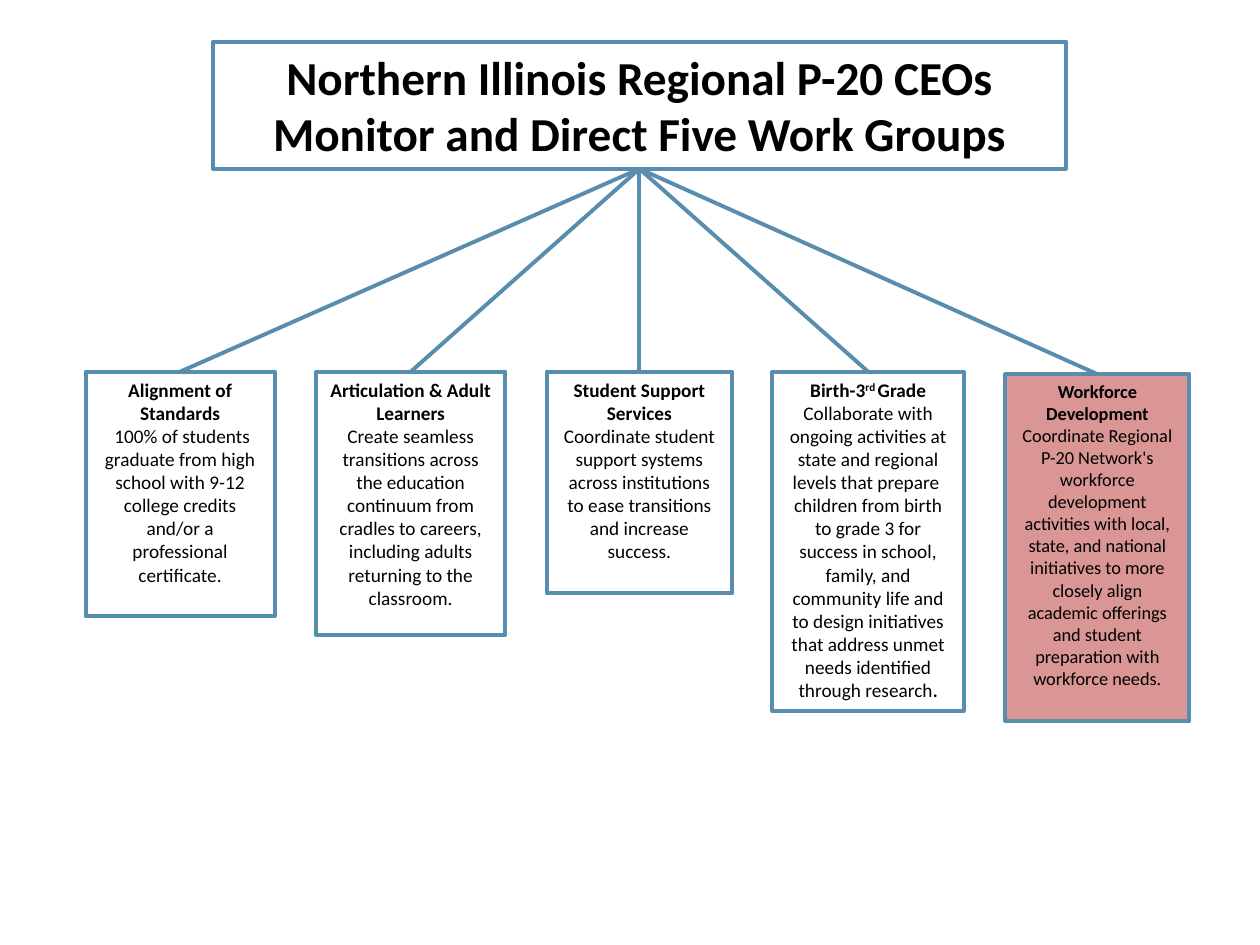
"""Build a slide showing the P-20 CEOs directing five work groups."""
from dataclasses import dataclass
from typing import Optional

from lxml import etree
from pptx import Presentation
from pptx.dml.color import RGBColor
from pptx.enum.shapes import MSO_CONNECTOR, MSO_SHAPE
from pptx.enum.text import MSO_ANCHOR, MSO_AUTO_SIZE, PP_ALIGN
from pptx.oxml.ns import qn
from pptx.shapes.autoshape import Shape
from pptx.slide import Slide
from pptx.util import Inches, Pt

RECTANGLE = MSO_SHAPE.RECTANGLE
STRAIGHT = MSO_CONNECTOR.STRAIGHT
TOP = MSO_ANCHOR.TOP
NO_AUTOFIT = MSO_AUTO_SIZE.NONE
CENTER = PP_ALIGN.CENTER


@dataclass(frozen=True)
class Theme:
    font: str = "Calibri"
    text: RGBColor = RGBColor(0x00, 0x00, 0x00)
    line: RGBColor = RGBColor(0x58, 0x8D, 0xAF)
    highlight: RGBColor = RGBColor(0xD9, 0x96, 0x94)
    line_width: float = 2.25
    title_size: float = 27
    group_size: float = 11
    small_size: float = 10.5


THEME = Theme()


@dataclass(frozen=True)
class TextRun:
    text: str
    bold: bool = False
    size: Optional[float] = None
    superscript: bool = False


@dataclass(frozen=True)
class Box:
    left: float
    top: float
    width: float
    height: float
    paragraphs: list[list[TextRun]]
    size: float = THEME.group_size
    fill: Optional[RGBColor] = None


def heading(text: str) -> list[TextRun]:
    return [TextRun(text, bold=True)]


GROUP_TOP = 2.95

TITLE = Box(1.69, 0.33, 6.77, 1.01, [
    heading("Northern Illinois Regional P-20 CEOs"),
    heading("Monitor and Direct Five Work Groups"),
], THEME.title_size)

WORK_GROUPS = [
    Box(0.68, GROUP_TOP, 1.5, 1.94, [
        heading("Alignment of Standards"),
        [TextRun(" 100% of students graduate from high school with 9-12 college "
                 "credits and/or a professional certificate.")],
    ]),
    Box(2.51, GROUP_TOP, 1.5, 2.09, [
        heading("Articulation & Adult Learners"),
        [TextRun("Create seamless transitions across the education continuum from "
                 "cradles to careers, including adults returning to the classroom.")],
    ]),
    Box(4.34, GROUP_TOP, 1.47, 1.76, [
        heading("Student Support Services"),
        [TextRun("Coordinate student support systems across institutions to ease "
                 "transitions and increase success.")],
    ]),
    Box(6.13, GROUP_TOP, 1.52, 2.69, [
        [TextRun("Birth-3", bold=True), TextRun("rd ", bold=True, superscript=True),
         TextRun("Grade", bold=True)],
        [TextRun("Collaborate with ongoing activities at state and regional levels "
                 "that prepare  children from birth to grade 3 for success in school, "
                 "family, and community life and to design initiatives that address "
                 "unmet needs identified through research"),
         TextRun(".", bold=True, size=THEME.small_size)],
    ]),
    Box(7.98, 2.97, 1.46, 2.75, [
        heading("Workforce Development"),
        [TextRun("Coordinate Regional P-20 Network's workforce development activities "
                 "with local, state, and national initiatives to more closely align "
                 "academic offerings and student preparation with workforce needs.")],
    ], THEME.small_size, THEME.highlight),
]


def add_box(slide: Slide, box: Box) -> Shape:
    shape = slide.shapes.add_shape(RECTANGLE, Inches(box.left), Inches(box.top),
                                   Inches(box.width), Inches(box.height))
    shape.shadow.inherit = False
    shape.line.color.rgb = THEME.line
    shape.line.width = Pt(THEME.line_width)
    if box.fill is None:
        shape.fill.background()
    else:
        shape.fill.solid()
        shape.fill.fore_color.rgb = box.fill
    frame = shape.text_frame
    frame.word_wrap = True
    frame.auto_size = NO_AUTOFIT
    frame.vertical_anchor = TOP
    for index, text_runs in enumerate(box.paragraphs):
        paragraph = frame.add_paragraph() if index else frame.paragraphs[0]
        paragraph.alignment = CENTER
        for text_run in text_runs:
            run = paragraph.add_run()
            run.text = text_run.text
            run.font.name = THEME.font
            run.font.size = Pt(text_run.size or box.size)
            run.font.bold = text_run.bold
            run.font.color.rgb = THEME.text
            if text_run.superscript:
                run.font._element.set("baseline", "30000")
    return shape


def add_branch(slide: Slide, parent: Shape, child: Shape) -> None:
    connector = slide.shapes.add_connector(STRAIGHT, 0, 0, 0, 0)
    connector.begin_connect(parent, 2)
    connector.end_connect(child, 0)
    connector.line.color.rgb = THEME.line
    connector.line.width = Pt(THEME.line_width)
    etree.SubElement(connector._element.spPr, qn("a:effectLst"))


def main() -> None:
    presentation = Presentation()
    presentation.slide_width = Inches(10)
    presentation.slide_height = Inches(7.5)
    slide = presentation.slides.add_slide(presentation.slide_layouts[6])
    title = add_box(slide, TITLE)
    for work_group in WORK_GROUPS:
        add_branch(slide, title, add_box(slide, work_group))
    presentation.save("out.pptx")


if __name__ == "__main__":
    main()
